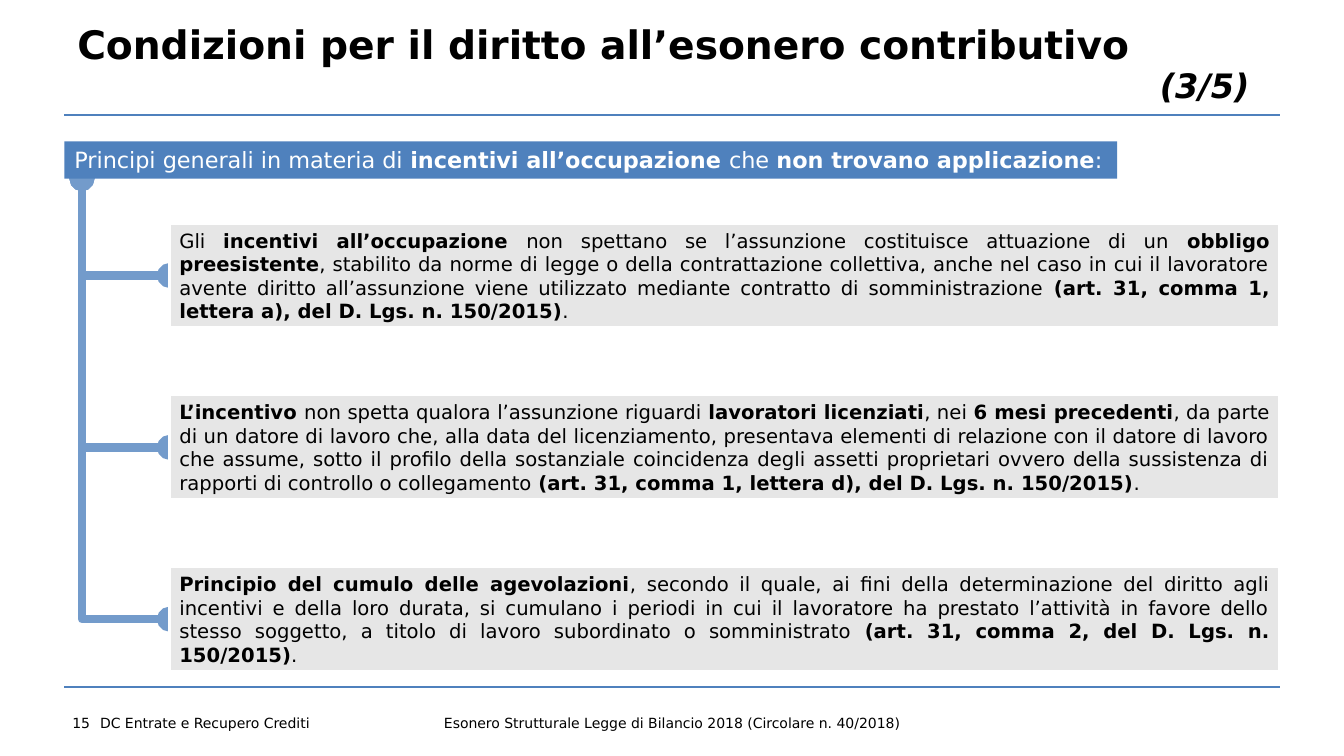
from lxml.etree import SubElement
from pptx import Presentation
from pptx.dml.color import RGBColor
from pptx.enum.shapes import MSO_CONNECTOR, MSO_SHAPE
from pptx.enum.text import MSO_ANCHOR, MSO_AUTO_SIZE, PP_ALIGN
from pptx.oxml.ns import qn
from pptx.util import Pt

COLORS = {"blue": "4F81BD", "branch": "739BCB", "panel": "E6E6E6",
          "white": "FFFFFF", "black": "000000"}
FONT = "DejaVu Sans"
LEFT, RIGHT = 46, 914
HEADING = "Principi generali in materia di *incentivi all’occupazione *che *non trovano applicazione*:"
PRINCIPLES = [
    "Gli *incentivi all’occupazione *non spettano se l’assunzione costituisce attuazione di un "
    "*obbligo preesistente*, stabilito da norme di legge o della contrattazione collettiva, anche "
    "nel caso in cui il lavoratore avente diritto all’assunzione viene utilizzato mediante "
    "contratto di somministrazione *(art. 31, comma 1, lettera a), del D. Lgs. n. 150/2015)*.",
    "*L’incentivo *non spetta qualora l’assunzione riguardi *lavoratori licenziati*, nei "
    "*6 mesi precedenti*, da parte di un datore di lavoro che, alla data del licenziamento, "
    "presentava elementi di relazione con il datore di lavoro che assume, sotto il profilo della "
    "sostanziale coincidenza degli assetti proprietari ovvero della sussistenza di rapporti di "
    "controllo o collegamento *(art. 31, comma 1, lettera d), del D. Lgs. n. 150/2015)*.",
    "*Principio del cumulo delle agevolazioni*, secondo il quale, ai fini della determinazione "
    "del diritto agli incentivi e della loro durata, si cumulano i periodi in cui il lavoratore "
    "ha prestato l’attività in favore dello stesso soggetto, a titolo di lavoro subordinato o "
    "somministrato *(art. 31, comma 2, del D. Lgs. n. 150/2015)*.",
]


def rgb(name):
    return RGBColor.from_string(COLORS[name])


def write(s, text, size, color="black", align=PP_ALIGN.LEFT, anchor=MSO_ANCHOR.TOP, inset=None):
    """Fill a shape with one paragraph; asterisks switch bold on and off."""
    tf = s.text_frame
    tf.word_wrap = True
    tf.auto_size = MSO_AUTO_SIZE.NONE
    tf.vertical_anchor = anchor
    if inset is not None:
        tf.margin_left = tf.margin_right = tf.margin_top = tf.margin_bottom = Pt(inset)
    p = tf.paragraphs[0]
    p.alignment = align
    for i, part in enumerate(text.split("*")):
        if part:
            r = p.add_run()
            r.text = part
            r.font.name, r.font.size, r.font.bold = FONT, Pt(size), i % 2 == 1
            r.font.color.rgb = rgb(color)
    return p


def add_text(slide, box, text, size, **style):
    s = slide.shapes.add_textbox(*map(Pt, box))
    return write(s, text, size, **style)


def add_panel(slide, box, text, size, fill, color, border=None):
    s = slide.shapes.add_shape(MSO_SHAPE.RECTANGLE, *map(Pt, box))
    s.shadow.inherit = False
    s.fill.solid()
    s.fill.fore_color.rgb = rgb(fill)
    if border:
        s.line.color.rgb = rgb(border)
        s.line.width = Pt(2.25)
    else:
        s.line.fill.background()
    write(s, text, size, color=color, align=PP_ALIGN.JUSTIFY, anchor=MSO_ANCHOR.MIDDLE)
    s.text_frame.auto_size = MSO_AUTO_SIZE.SHAPE_TO_FIT_TEXT


def add_line(slide, kind, ends, color, width):
    c = slide.shapes.add_connector(kind, *map(Pt, ends))
    c.line.color.rgb = rgb(color)
    c.line.width = Pt(width)
    SubElement(c._element.spPr, qn("a:effectLst"))
    return c


def add_branch(slide, x1, y1, x2, y2):
    """Run down from the first point, then right to the second."""
    cx, cy = (x1 + x2) / 2, (y1 + y2) / 2
    half_run, half_drop = (x2 - x1) / 2, (y2 - y1) / 2
    # The elbow is laid out on its side, then turned by 270 degrees.
    ends = (cx + half_drop, cy - half_run, cx - half_drop, cy + half_run)
    c = add_line(slide, MSO_CONNECTOR.ELBOW, ends, "branch", 6)
    spPr = c._element.spPr
    spPr.find(qn("a:xfrm")).set("rot", "16200000")
    spPr.find(qn("a:prstGeom")).set("prst", "bentConnector2")
    ln = spPr.find(qn("a:ln"))
    for end in ("a:headEnd", "a:tailEnd"):
        SubElement(ln, qn(end)).set("type", "oval")


def add_header(slide, x, y, w, h):
    s = slide.shapes.title
    s.left, s.top, s.width, s.height = Pt(x + 2), Pt(y), Pt(w - 3), Pt(h)
    title = write(s, "*Condizioni per il diritto all’esonero contributivo*", 28)
    part = add_text(slide, (x + w - 103, y + 31.5, 99, 28), "*(3/5)*", 24, align=PP_ALIGN.CENTER)
    part.runs[0].font.italic = True
    title.line_spacing = part.line_spacing = 0.85
    add_line(slide, MSO_CONNECTOR.STRAIGHT, (x, y + h, x + w, y + h), "blue", 1.5)


def add_principles(slide, x, y, w):
    heading_h, panel_h, pitch, indent = 26.6, 75, 122.75, 75
    tops = [y + 58.3 + i * pitch for i in range(len(PRINCIPLES))]
    for top in tops:
        add_branch(slide, x + 12.5, y + heading_h, x + indent, top + panel_h / 2)
    for top, text in zip(tops, PRINCIPLES):
        add_panel(slide, (x + indent, top, w - indent, panel_h), text, 14,
                  "panel", "black", border="white")
    add_panel(slide, (x, y, 752, heading_h), HEADING, 16, "blue", "white")


def add_footer(slide, x, y, w):
    add_line(slide, MSO_CONNECTOR.STRAIGHT, (x, y, x + w, y), "blue", 1.5)
    middle = MSO_ANCHOR.MIDDLE
    add_text(slide, (x + 2, y + 12.5, 20, 26), "15", 10,
             align=PP_ALIGN.CENTER, anchor=middle, inset=0)
    add_text(slide, (x + 22.5, y + 17, 221, 17), "DC Entrate e Recupero Crediti", 10,
             anchor=middle, inset=3)
    add_text(slide, (x + 263.5, y + 17, 341, 17),
             "Esonero Strutturale Legge di Bilancio 2018 (Circolare n. 40/2018)", 10,
             align=PP_ALIGN.CENTER, anchor=middle, inset=3)


def main():
    prs = Presentation()
    prs.slide_width, prs.slide_height = Pt(960), Pt(540)
    slide = prs.slides.add_slide(prs.slide_layouts[5])
    add_header(slide, LEFT, 16, RIGHT - LEFT, 66)
    add_principles(slide, LEFT, 101, RIGHT - LEFT)
    add_footer(slide, LEFT, 491, RIGHT - LEFT)
    prs.save("out.pptx")


if __name__ == "__main__":
    main()
